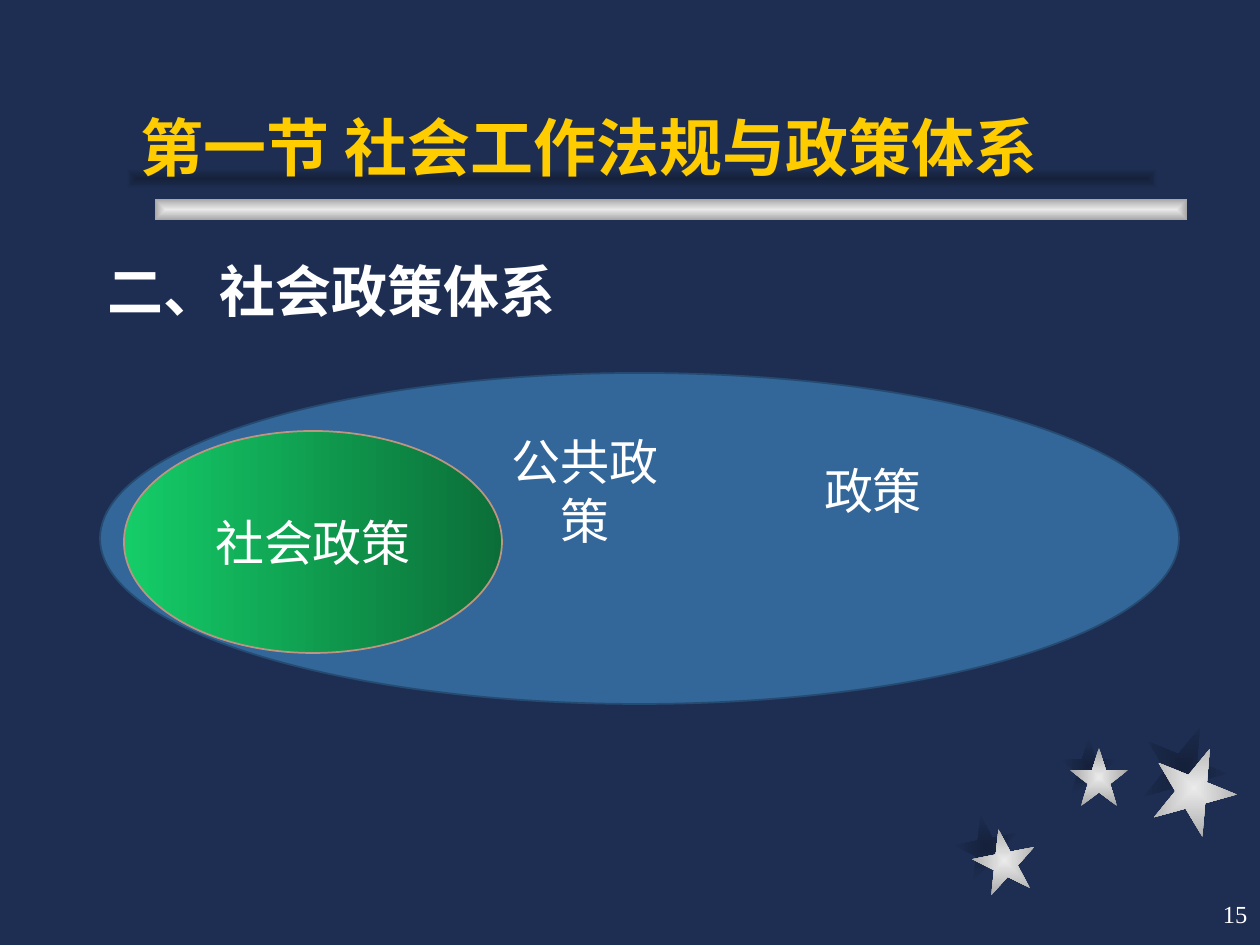
from lxml import etree
from pptx import Presentation
from pptx.dml.color import RGBColor
from pptx.enum.shapes import MSO_SHAPE as SHAPE
from pptx.enum.text import MSO_ANCHOR as ANCHOR, MSO_AUTO_SIZE as AUTO, PP_ALIGN as ALIGN
from pptx.oxml.ns import qn
from pptx.util import Emu, Pt

NAVY = RGBColor(0x1E, 0x2E, 0x53)
SHADE = RGBColor(0x15, 0x21, 0x3B)
SILVER = RGBColor(0xEA, 0xEA, 0xEA)
GREY = RGBColor(0xA7, 0xA7, 0xA7)
GOLD = RGBColor(0xFF, 0xCC, 0x00)
WHITE = RGBColor(0xFF, 0xFF, 0xFF)
BLUE = RGBColor(0x33, 0x66, 0x99)
BLUE_EDGE = RGBColor(0x26, 0x4B, 0x71)
GREEN = RGBColor(0x14, 0xCD, 0x68)
DARK_GREEN = RGBColor(0x0B, 0x6E, 0x38)
TAN = RGBColor(0xBD, 0x95, 0x80)
CJK = "Noto Sans CJK SC"

TITLE = "第一节 社会工作法规与政策体系"
HEADING = "二、社会政策体系"
PAGE = "15"
# Boxes are left, top, width, height in px
OUTER = (100, 373, 1079, 331)
INNER = ("社会政策", (124, 431, 378, 222))
LABELS = [("公共政策", (475, 455, 220, 70)), ("政策", (803, 455, 140, 70))]
# Star: shadow left and top, front left and top, size, rotation
STARS = [(955, 815, 973, 829, 63, 349),
         (1060, 737, 1070, 748, 58, 0),
         (1142, 725, 1152, 746, 84, 22)]
BAR, BAR_SHADOW = (155, 199, 1032, 21), (126, 168, 1032, 21)


def px(n):
    return Emu(round(n * 914400 / 126))


def place(sp, box):
    sp.left, sp.top, sp.width, sp.height = map(px, box)


def add_shape(kind, box, edge=None):
    s = slide.shapes.add_shape(kind, *map(px, box))
    s.shadow.inherit = False
    if edge is None:
        s.line.fill.background()
    else:
        s.line.color.rgb = edge
        s.line.width = Pt(1)
    return s


def fill_gradient(s, start, end, radial=True):
    s.fill.gradient()
    for stop, color, pos in zip(s.fill.gradient_stops, (start, end), (0, 1)):
        stop.color.rgb, stop.position = color, pos
    s.fill.gradient_angle = 0
    if radial:
        grad = s._element.spPr.find(qn("a:gradFill"))
        grad.remove(grad.find(qn("a:lin")))
        path = etree.SubElement(grad, qn("a:path"), {"path": "shape"})
        etree.SubElement(path, qn("a:fillToRect"), dict.fromkeys("ltrb", "50000"))


def write(s, text, size, color=WHITE, font="Arial", bold=False,
          align=ALIGN.CENTER, anchor=ANCHOR.MIDDLE, wrap=True):
    tf = s.text_frame
    tf.auto_size = AUTO.NONE
    tf.word_wrap = wrap
    tf.vertical_anchor = anchor
    p = tf.paragraphs[0]
    p.alignment = align
    r = p.add_run()
    r.text = text
    r.font.name, r.font.size, r.font.bold = font, Pt(size), bold
    r.font.color.rgb = color
    etree.SubElement(r._r.get_or_add_rPr(), qn("a:ea"), {"typeface": CJK})
    return p


prs = Presentation()
prs.slide_width, prs.slide_height = px(1260), px(945)
slide = prs.slides.add_slide(prs.slide_layouts[1])
slide.background.fill.solid()
slide.background.fill.fore_color.rgb = NAVY
title, body = slide.placeholders

stars = [(x, y, size, turn, SHADE, NAVY) for x, y, _, _, size, turn in STARS]
stars += [(x, y, size, turn, SILVER, GREY) for _, _, x, y, size, turn in STARS]
for x, y, size, turn, start, end in stars:
    star = add_shape(SHAPE.STAR_5_POINT, (x, y, size, size))
    star.rotation = turn
    fill_gradient(star, start, end)
for box, start, end in [(BAR, SILVER, GREY), (BAR_SHADOW, SHADE, NAVY)]:
    fill_gradient(add_shape(SHAPE.RECTANGLE, box), start, end)

page = slide.shapes.add_textbox(*map(px, (998, 882, 262, 63)))
write(page, PAGE, 14, font="Times New Roman", align=ALIGN.RIGHT, wrap=False)

# Placeholders come first in the tree; bring them above the decoration
for sp in (title, body):
    slide.shapes._spTree.append(sp._element)

place(title, (58, 32, 1153, 158))
p = write(title, TITLE, 36, GOLD, CJK, True, ALIGN.LEFT, ANCHOR.BOTTOM)
title.text_frame.margin_left = px(83)
p.line_spacing = 0.8

place(body, (95, 243, 1108, 587))
p = write(body, HEADING, 32, WHITE, CJK, True, ALIGN.LEFT, ANCHOR.TOP)
p.line_spacing = 1.1
p.space_before = Pt(6.4)
pPr = p._p.get_or_add_pPr()
pPr.set("marL", "0")
pPr.set("indent", "0")
etree.SubElement(pPr, qn("a:buNone"))

outer = add_shape(SHAPE.OVAL, OUTER, BLUE_EDGE)
outer.fill.solid()
outer.fill.fore_color.rgb = BLUE
for text, box in LABELS:
    write(slide.shapes.add_textbox(*map(px, box)), text, 28)
text, box = INNER
inner = add_shape(SHAPE.OVAL, box, TAN)
fill_gradient(inner, GREEN, DARK_GREEN, radial=False)
write(inner, text, 28)

# Keep the labels in front of both ellipses
slide.shapes._spTree.insert(slide.shapes._spTree.index(outer._element) + 1, inner._element)

prs.save("out.pptx")
